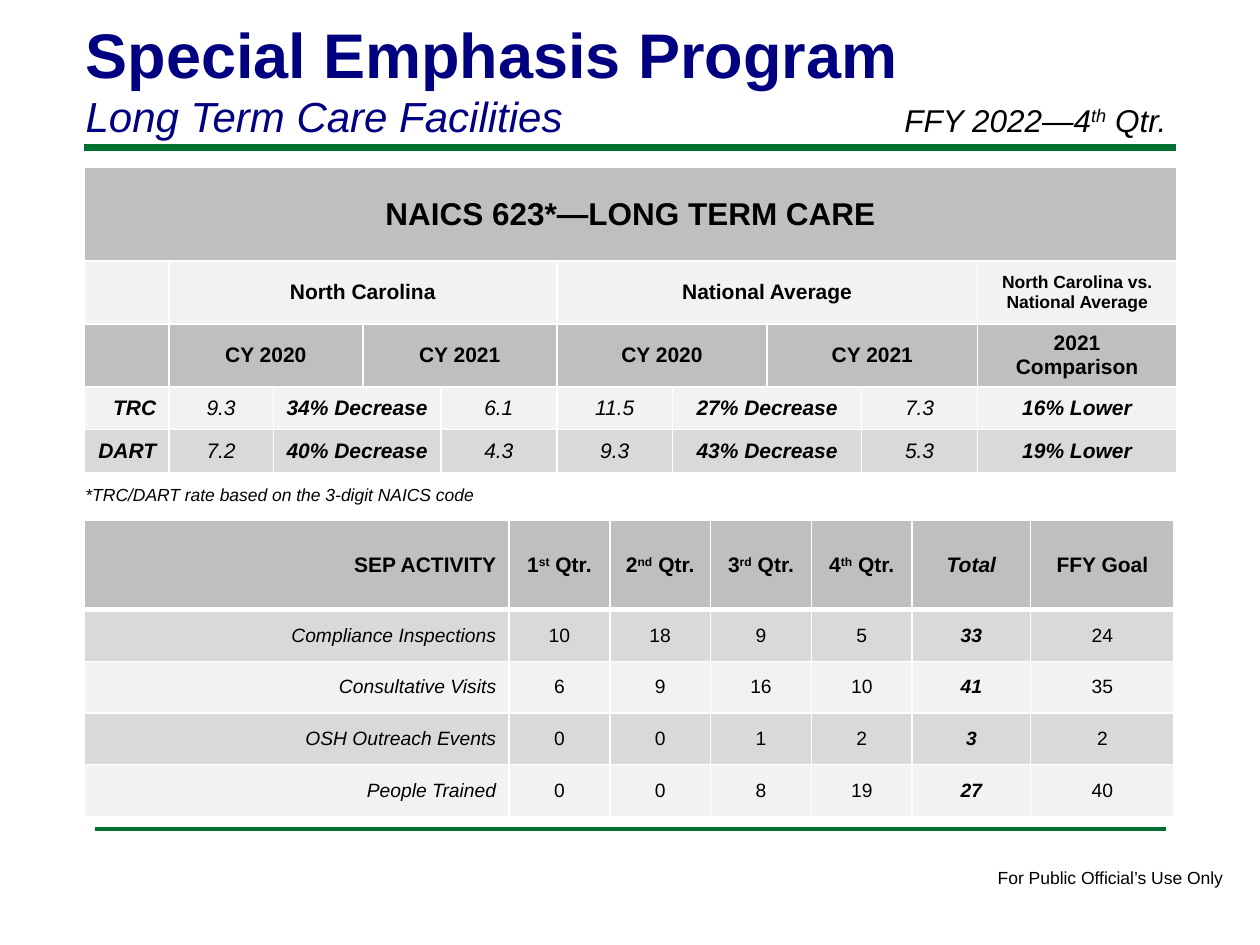
from dataclasses import dataclass
from lxml.etree import SubElement
from pptx import Presentation
from pptx.dml.color import RGBColor
from pptx.enum.shapes import MSO_CONNECTOR
from pptx.enum.text import MSO_ANCHOR as Anchor, MSO_AUTO_SIZE as AutoSize, PP_ALIGN as Align
from pptx.oxml.ns import qn
from pptx.slide import Slide
from pptx.util import Inches, Pt

COLORS = {
    "navy": "000080", "green": "007030", "black": "000000", "white": "FFFFFF",
    "header": "BFBFBF", "dark": "D9D9D9", "light": "F2F2F2",
}


def rgb(name):
    return RGBColor.from_string(COLORS[name])


def write(para, text, size=12, bold=False, italic=False, color="black",
          align=Align.LEFT, font="Arial"):
    """Fill a paragraph; text between carets is superscript."""
    para.alignment = align
    for index, piece in enumerate(text.split("^")):
        span = para.add_run()
        span.text = piece
        span.font.name, span.font.size = font, Pt(size)
        span.font.bold, span.font.italic = bold, italic
        span.font.color.rgb = rgb(color)
        if index % 2:
            span._r.get_or_add_rPr().set("baseline", "30000")


def set_borders(cell, top, bottom):
    properties = cell._tc.get_or_add_tcPr()
    for side, width in (("L", 1), ("R", 1), ("T", top), ("B", bottom)):
        line = SubElement(properties, qn(f"a:ln{side}"), w=str(Pt(width)))
        fill = SubElement(line, qn("a:solidFill"))
        SubElement(fill, qn("a:srgbClr"), val=COLORS["white"])


@dataclass
class Page:
    slide: Slide
    rule_color: str = "green"

    def title(self, left, top, width, height, lines):
        box = self.slide.shapes.title
        box.left, box.top = Inches(left), Inches(top)
        box.width, box.height = Inches(width), Inches(height)
        frame = box.text_frame
        frame.word_wrap, frame.auto_size = True, AutoSize.NONE
        frame.vertical_anchor = Anchor.BOTTOM
        for index, (text, style) in enumerate(lines):
            para = frame.add_paragraph() if index else frame.paragraphs[0]
            write(para, text, color="navy", **style)

    def text(self, left, top, width, height, text, wrap=False, **style):
        box = self.slide.shapes.add_textbox(
            Inches(left), Inches(top), Inches(width), Inches(height))
        box.text_frame.word_wrap = wrap
        write(box.text_frame.paragraphs[0], text, **style)

    def rule(self, left, right, y, width):
        line = self.slide.shapes.add_connector(
            MSO_CONNECTOR.STRAIGHT, Inches(left), Inches(y), Inches(right), Inches(y))
        line.line.color.rgb, line.line.width = rgb(self.rule_color), Pt(width)
        SubElement(line._element.spPr, qn("a:effectLst"))

    def table(self, left, top, widths, heights, rows, fills, style_of, header_line=1):
        """Draw a table; a None entry continues the cell to its left."""
        table = self.slide.shapes.add_table(
            len(rows), len(widths), Inches(left), Inches(top),
            Inches(sum(widths)), Inches(sum(heights))).table
        table.first_row = table.horz_banding = False
        for column, width in zip(table.columns, widths):
            column.width = Inches(width)
        for r, (row, height) in enumerate(zip(rows, heights)):
            table.rows[r].height = Inches(height)
            for c, text in enumerate(row):
                cell = table.cell(r, c)
                set_borders(cell, header_line if r == 1 else 1, header_line if r == 0 else 1)
                cell.fill.solid()
                cell.fill.fore_color.rgb = rgb(fills[r])
                cell.vertical_anchor = Anchor.MIDDLE
                if text:
                    write(cell.text_frame.paragraphs[0], text, **style_of(r, c, text))
                if text is not None:
                    last = c
                    while last + 1 < len(row) and row[last + 1] is None:
                        last += 1
                    if last > c:
                        cell.merge(table.cell(r, last))


def rate_style(row, column, text):
    size = 18 if row == 0 else 10 if (row, column) == (1, 9) else 12
    is_rate = text.replace(".", "").isdigit()
    return {"size": size, "bold": not is_rate, "italic": row > 2,
            "align": Align.RIGHT if column == 0 and row > 2 else Align.CENTER}


def activity_style(row, column, text):
    return {"size": 11 if row else 12, "bold": row == 0 or column == 5,
            "italic": column == 5 or (row > 0 and column == 0),
            "align": Align.CENTER if column else Align.RIGHT}


RATE_ROWS = [
    ["NAICS 623*—LONG TERM CARE"] + [None] * 9,
    ["", "North Carolina", None, None, None, "National Average", None, None, None,
     "North Carolina vs. National Average"],
    ["", "CY 2020", None, "CY 2021", None, "CY 2020", None, "CY 2021", None,
     "2021 Comparison"],
    ["TRC", "9.3", "34% Decrease", None, "6.1", "11.5", "27% Decrease", None, "7.3",
     "16% Lower"],
    ["DART", "7.2", "40% Decrease", None, "4.3", "9.3", "43% Decrease", None, "5.3",
     "19% Lower"],
]
ACTIVITY_ROWS = [
    ["SEP ACTIVITY", "1^st^ Qtr.", "2^nd^ Qtr.", "3^rd^ Qtr.", "4^th^ Qtr.", "Total",
     "FFY Goal"],
    ["Compliance Inspections", "10", "18", "9", "5", "33", "24"],
    ["Consultative Visits", "6", "9", "16", "10", "41", "35"],
    ["OSH Outreach Events", "0", "0", "1", "2", "3", "2"],
    ["People Trained", "0", "0", "8", "19", "27", "40"],
]


def main():
    deck = Presentation()
    deck.slide_width, deck.slide_height = Inches(10), Inches(7.5)
    page = Page(deck.slides.add_slide(deck.slide_layouts[5]))

    page.rule(0.67, 9.33, 1.17, 4)
    page.rule(0.75, 9.25, 6.58, 2)
    page.text(7.82, 6.83, 2.01, 0.27, "For Public Official’s Use Only", size=10)
    page.title(0.58, 0.06, 8.25, 1.11, [
        ("Special Emphasis Program", {"size": 36, "bold": True}),
        ("Long Term Care Facilities", {"size": 24, "italic": True}),
    ])
    page.table(0.67, 1.33, [0.67, 0.83, 0.71, 0.62, 0.92, 0.92, 0.75, 0.75, 0.92, 1.58],
               [0.74, 0.5, 0.5, 0.34, 0.34], RATE_ROWS,
               ["header", "light", "header", "light", "dark"], rate_style)
    page.text(0.58, 3.79, 3.38, 0.27, "*TRC/DART rate based on the 3-digit NAICS code",
              size=10, italic=True)
    page.table(0.67, 4.13, [3.37] + [0.8] * 4 + [0.94, 1.14], [0.71] + [0.41] * 4,
               ACTIVITY_ROWS, ["header"] + ["dark", "light"] * 2, activity_style,
               header_line=3)
    page.text(7.08, 0.75, 2.5, 0.4, "FFY 2022—4^th^ Qtr.", wrap=True, size=18, italic=True)

    deck.save("out.pptx")


if __name__ == "__main__":
    main()
